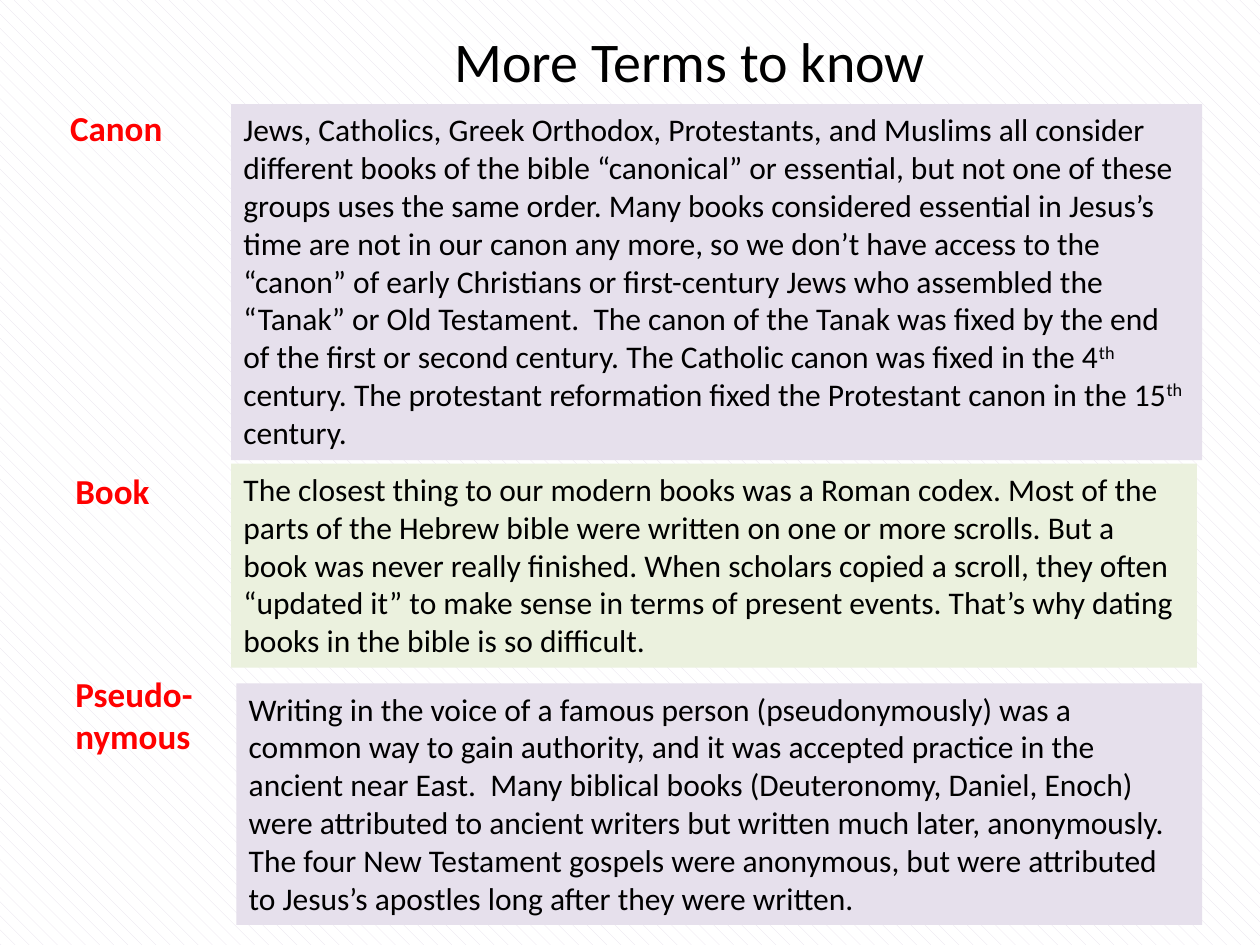
from pptx import Presentation
from pptx.dml.color import RGBColor
from pptx.enum import dml, shapes, text
from pptx.util import Pt

BLACK, RED, WHITE = "000000", "FF0000", "FFFFFF"
LILAC, GREEN = "E6E0EC", "EBF1DE"

# Label, label box, definition box, fill, definition runs (every second run is raised)
TERMS = [
    ("Canon", (33, 57.5, 67.5, 31.5), (132, 59.5, 555, 203.5), LILAC,
     ["Jews, Catholics, Greek Orthodox, Protestants, and Muslims all consider "
      "different books of the bible “canonical” or essential, but not one of these "
      "groups uses the same order. Many books considered essential in Jesus’s time "
      "are not in our canon any more, so we don’t have access to the “canon” of early "
      "Christians or first-century Jews who assembled the “Tanak” or Old Testament.  "
      "The canon of the Tanak was fixed by the end of the first or second century. "
      "The Catholic canon was fixed in the 4", "th",
      " century. The protestant reformation fixed the Protestant canon in the 15", "th",
      " century."]),
    ("Book", (36, 265, 57.5, 31.5), (132, 265, 552, 116.5), GREEN,
     ["The closest thing to our modern books was a Roman codex. Most of the parts of "
      "the Hebrew bible were written on one or more scrolls. But a book was never "
      "really finished. When scholars copied a scroll, they often “updated it” to make "
      "sense in terms of present events. That’s why dating books in the bible is so "
      "difficult."]),
    ("Pseudo-\nnymous", (36, 380.5, 82, 55.5), (135, 390.5, 552, 138), LILAC,
     ["Writing in the voice of a famous person (pseudonymously) was a common way to "
      "gain authority, and it was accepted practice in the ancient near East.  Many "
      "biblical books (Deuteronomy, Daniel, Enoch) were attributed to ancient writers "
      "but written much later, anonymously. The four New Testament gospels were "
      "anonymous, but were attributed to Jesus’s apostles long after they were "
      "written."]),
]


def rgb(value):
    return RGBColor.from_string(value)


def format_text(sp, size, color, bold=False, wrap=False):
    tf = sp.text_frame
    tf.word_wrap = wrap
    tf.auto_size = text.MSO_AUTO_SIZE.SHAPE_TO_FIT_TEXT
    tf.vertical_anchor = text.MSO_ANCHOR.TOP
    for p in tf.paragraphs:
        p.alignment = text.PP_ALIGN.LEFT
        f = p.font
        f.name, f.size, f.bold = "Calibri", Pt(size), bold
        f.color.rgb = rgb(color)


def add_title(s, title, box):
    sp = s.shapes.title
    sp.left, sp.top, sp.width, sp.height = map(Pt, box)
    sp.text_frame.text = title
    format_text(sp, 32, BLACK)


def add_label(s, label, box):
    sp = s.shapes.add_textbox(*map(Pt, box))
    sp.text_frame.text = label
    format_text(sp, 20, RED, bold=True)


def add_definition(s, runs, box, fill):
    sp = s.shapes.add_shape(shapes.MSO_SHAPE.RECTANGLE, *map(Pt, box))
    sp.shadow.inherit = False
    sp.fill.solid()
    sp.fill.fore_color.rgb = rgb(fill)
    sp.line.fill.background()
    p = sp.text_frame.paragraphs[0]
    for i, words in enumerate(runs):
        r = p.add_run()
        r.text = words
        if i % 2:  # superscript
            r._r.get_or_add_rPr().set("baseline", "30000")
    format_text(sp, 18, BLACK, wrap=True)


def set_background(s):
    fill = s.background.fill
    fill.patterned()
    fill.pattern = dml.MSO_PATTERN.SHINGLE
    fill.fore_color.rgb = rgb(LILAC)
    fill.back_color.rgb = rgb(WHITE)


def main():
    prs = Presentation()
    prs.slide_width, prs.slide_height = Pt(720), Pt(540)
    s = prs.slides.add_slide(prs.slide_layouts[5])
    set_background(s)
    add_title(s, "More Terms to know", (252.5, 11.5, 286, 46))

    # Terms on the left, definitions on the right
    for label, label_box, box, fill, runs in TERMS:
        add_label(s, label, label_box)
        add_definition(s, runs, box, fill)

    prs.save("out.pptx")


if __name__ == "__main__":
    main()
